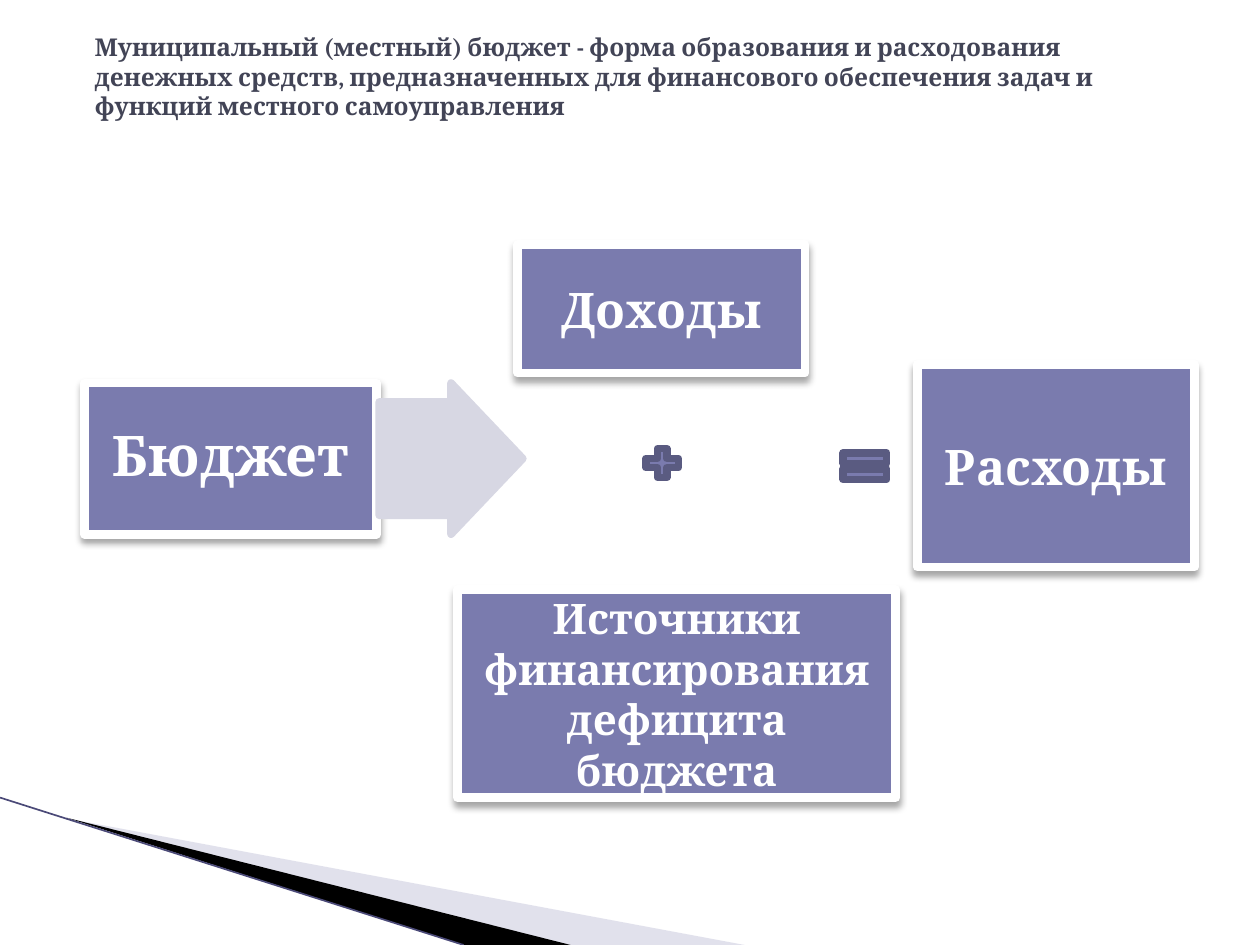
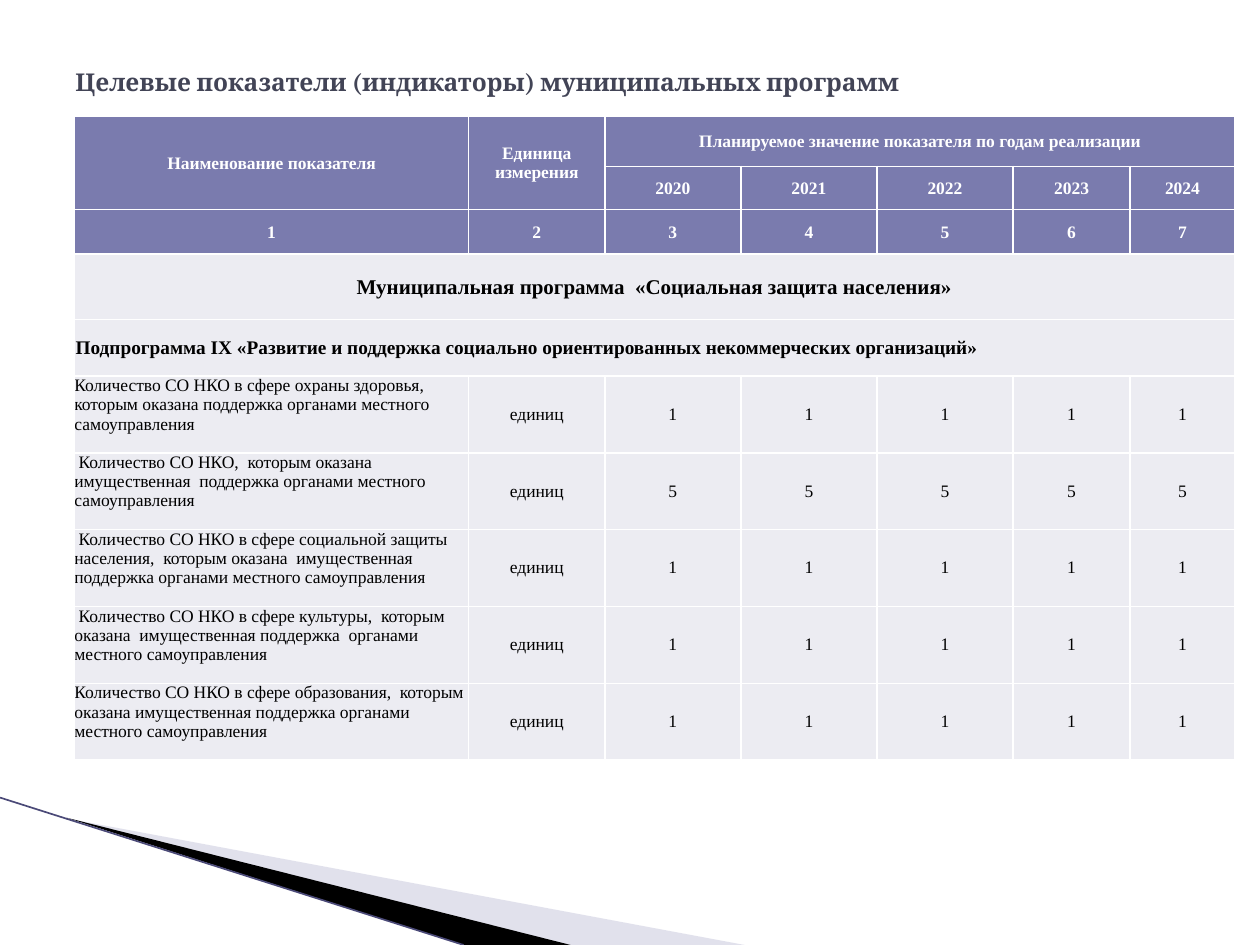
from lxml.etree import SubElement
from pptx import Presentation
from pptx.dml.color import RGBColor
from pptx.enum.shapes import MSO_CONNECTOR, MSO_SHAPE
from pptx.enum.text import MSO_ANCHOR, PP_ALIGN
from pptx.oxml import parse_xml
from pptx.oxml.ns import nsdecls, qn
from pptx.util import Inches, Pt

COLORS = {
    "accent": "7A7BAE", "sign_edge": "5A5B81", "arrow": "D7D7E3",
    "title": "424456", "white": "FFFFFF", "black": "000000",
    "row": "ECECF2", "wedge": "B6B6D1", "edge": "4B4A78",
}
HEADING_FONT, TABLE_FONT = "Cambria", "Times New Roman"

COLUMNS = [3.13, 1.08, 1.08, 1.08, 1.08, 0.93, 0.83]
HEADER_ROWS = [0.4, 0.32, 0.35]
SECTION_ROWS = [0.52, 0.45]
INDICATOR_ROW = 0.61
YEARS = range(2020, 2025)
INDICATORS = [
    ("Количество СО НКО в сфере охраны здоровья, которым оказана поддержка "
     "органами местного самоуправления", 1),
    (" Количество СО НКО,  которым оказана имущественная  поддержка "
     "органами местного самоуправления", 5),
    (" Количество СО НКО в сфере социальной защиты населения,  которым "
     "оказана  имущественная поддержка органами местного самоуправления", 1),
    (" Количество СО НКО в сфере культуры,  которым оказана  имущественная "
     "поддержка  органами местного самоуправления", 1),
    ("Количество СО НКО в сфере образования,  которым оказана имущественная "
     "поддержка органами местного самоуправления", 1),
]


def rgb(name):
    return RGBColor.from_string(COLORS[name])


def set_all(target, values):
    for name, value in values.items():
        setattr(target, name, value)


def write(frame, text, size, color, font=HEADING_FONT, bold=True,
          align=PP_ALIGN.LEFT, spacing=1.0):
    frame.word_wrap = True
    para = frame.paragraphs[0]
    set_all(para, {"alignment": align, "line_spacing": spacing})
    span = para.add_run()
    span.text = text
    set_all(span.font, {"name": font, "size": Pt(size), "bold": bold})
    span.font.color.rgb = rgb(color)


def set_opacity(shape, percent):
    for color in shape._element.spPr.iter(qn("a:srgbClr")):
        SubElement(color, qn("a:alpha"), val=str(percent * 1000))


def add_figure(page, kind, box, fill, edge, width):
    shape = page.shapes.add_shape(kind, *map(Inches, box))
    shape.shadow.inherit = False
    shape.fill.solid()
    shape.fill.fore_color.rgb = rgb(fill)
    shape.line.color.rgb = rgb(edge)
    shape.line.width = Pt(width)
    return shape


def add_card(page, text, size, box, spacing=1.0):
    card = add_figure(page, MSO_SHAPE.RECTANGLE, box, "accent", "white", 5)
    effects = card._element.spPr.find(qn("a:effectLst"))
    effects.append(parse_xml(
        f'<a:outerShdw {nsdecls("a")} blurRad="{Pt(4)}" dist="{Pt(3)}" '
        f'dir="5400000" rotWithShape="0"><a:srgbClr val="{COLORS["black"]}">'
        '<a:alpha val="35000"/></a:srgbClr></a:outerShdw>'))
    card.text_frame.vertical_anchor = MSO_ANCHOR.MIDDLE
    write(card.text_frame, text, size, "white", align=PP_ALIGN.CENTER,
          spacing=spacing)


def add_corner(page, left, top):
    """Wedges and edge line in the bottom left corner."""
    wedges = [
        ([(0.55, 0.17), (5.91, 1.17), (4.52, 1.17)], "wedge", 40),
        ([(0.53, 0.16), (4.53, 1.17), (3.68, 1.17)], "black", 100),
    ]
    for points, color, opacity in wedges:
        start, *others = [(Inches(left + x), Inches(top + y)) for x, y in points]
        builder = page.shapes.build_freeform(*start)
        builder.add_line_segments(others)
        wedge = builder.convert_to_shape()
        wedge.shadow.inherit = False
        wedge.fill.solid()
        wedge.fill.fore_color.rgb = rgb(color)
        wedge.line.fill.background()
        set_opacity(wedge, opacity)
    ends = (left, top, left + 3.68, top + 1.17)
    edge = page.shapes.add_connector(MSO_CONNECTOR.STRAIGHT, *map(Inches, ends))
    edge.line.color.rgb = rgb("edge")
    edge.line.width = Pt(0.95)
    SubElement(edge._element.spPr, qn("a:effectLst"))


def add_page(deck, title, box, indent=0.0):
    page = deck.slides.add_slide(deck.slide_layouts[6])
    add_corner(page, 0, 6.33)
    frame = page.shapes.add_textbox(*map(Inches, box)).text_frame
    set_all(frame, {"vertical_anchor": MSO_ANCHOR.MIDDLE,
                    "margin_left": Inches(0.1 + indent)})
    write(frame, title, 14, "title")
    return page


def add_budget_diagram(page, left, top):
    def at(x, y, width, height):
        return left + x, top + y, width, height

    # Budget and its arrow
    add_card(page, "Бюджет", 32, at(0, 1.1, 2.32, 1.2), 0.9)
    arrow = add_figure(page, MSO_SHAPE.RIGHT_ARROW, at(2.34, 1.1, 1.14, 1.2),
                       "arrow", "arrow", 4.33)
    arrow.adjustments[0] = 0.75

    # Income plus deficit sources equals spending
    add_card(page, "Доходы", 28, at(3.44, 0, 2.28, 1.02))
    add_figure(page, MSO_SHAPE.MATH_PLUS, at(4.41, 1.58, 0.35, 0.31),
               "accent", "sign_edge", 4.33)
    add_card(page, "Источники финансирования дефицита бюджета", 24,
             at(2.96, 2.74, 3.48, 1.65))
    add_figure(page, MSO_SHAPE.MATH_EQUAL, at(5.96, 1.58, 0.47, 0.36),
               "accent", "sign_edge", 4.33)
    add_card(page, "Расходы", 28, at(6.61, 0.95, 2.2, 1.61))


def style_cell(cell, fill, margin):
    set_all(cell, {"margin_left": Inches(margin), "margin_right": Inches(margin),
                   "margin_top": Inches(margin), "margin_bottom": 0})
    properties = cell._tc.get_or_add_tcPr()
    for side in ("lnL", "lnR", "lnT", "lnB"):
        line = SubElement(properties, qn(f"a:{side}"), w=str(Pt(1)))
        paint = SubElement(line, qn("a:solidFill"))
        SubElement(paint, qn("a:srgbClr"), val=COLORS["white"])
    cell.fill.solid()
    cell.fill.fore_color.rgb = rgb(fill)


def add_indicator_table(page, left, top):
    heights = HEADER_ROWS + SECTION_ROWS + [INDICATOR_ROW] * len(INDICATORS)
    box = (left, top, sum(COLUMNS), sum(heights))
    table = page.shapes.add_table(len(heights), len(COLUMNS),
                                  *map(Inches, box)).table
    for column, width in zip(table.columns, COLUMNS):
        column.width = Inches(width)
    for row, height in zip(table.rows, heights):
        row.height = Inches(height)

    header_count = len(HEADER_ROWS)
    body_start = header_count + len(SECTION_ROWS)
    for index, row in enumerate(table.rows):
        for cell in row.cells:
            style_cell(cell, "accent" if index < header_count else "row",
                       0.01 if index < body_start else 0)

    # Merged header and section cells: first row, column, last row, column
    for r1, c1, r2, c2 in [(0, 0, 1, 0), (0, 1, 1, 1), (0, 2, 0, 6),
                           (3, 0, 3, 6), (4, 0, 4, 6)]:
        table.cell(r1, c1).merge(table.cell(r2, c2))

    # Small type in covered cells keeps their rows from growing
    for cell in table.iter_cells():
        if cell.is_spanned:
            para = cell.text_frame.paragraphs[0]
            SubElement(para._p, qn("a:endParaRPr"), sz="1000")

    def put(row, column, text, size=10, color="white", bold=True,
            align=PP_ALIGN.CENTER, anchor=MSO_ANCHOR.MIDDLE):
        cell = table.cell(row, column)
        cell.vertical_anchor = anchor
        write(cell.text_frame, str(text), size, color, TABLE_FONT, bold, align)

    # Header
    for column, text in enumerate([
            "Наименование показателя", "Единица измерения",
            "Планируемое значение показателя по годам реализации"]):
        put(0, column, text)
    for column, year in enumerate(YEARS, 2):
        put(1, column, year)
    for column in range(len(COLUMNS)):
        put(2, column, column + 1)

    # Programme and subprogramme
    put(3, 0, "Муниципальная программа  «Социальная защита населения»", 12, "black")
    put(4, 0, "Подпрограмма IX «Развитие и поддержка социально ориентированных "
        "некоммерческих организаций»", 11, "black", align=PP_ALIGN.LEFT)

    # Indicators
    for row, (name, value) in enumerate(INDICATORS, body_start):
        put(row, 0, name, 10, "black", False, PP_ALIGN.LEFT, MSO_ANCHOR.TOP)
        for column, text in enumerate(["единиц"] + [value] * len(YEARS), 1):
            put(row, column, text, 10, "black", False)


def main():
    deck = Presentation()
    deck.slide_width, deck.slide_height = Inches(10), Inches(7.5)

    page = add_page(
        deck, "Муниципальный (местный) бюджет - форма образования и расходования "
        "денежных средств, предназначенных для финансового обеспечения задач и "
        "функций местного самоуправления", (0.5, 0.3, 8.91, 0.61), 0.15)
    add_budget_diagram(page, 0.67, 1.94)

    page = add_page(deck, "Целевые показатели (индикаторы) муниципальных программ",
                    (0.5, 0.3, 9, 0.69))
    add_indicator_table(page, 0.59, 0.92)

    deck.save("out.pptx")


if __name__ == "__main__":
    main()
